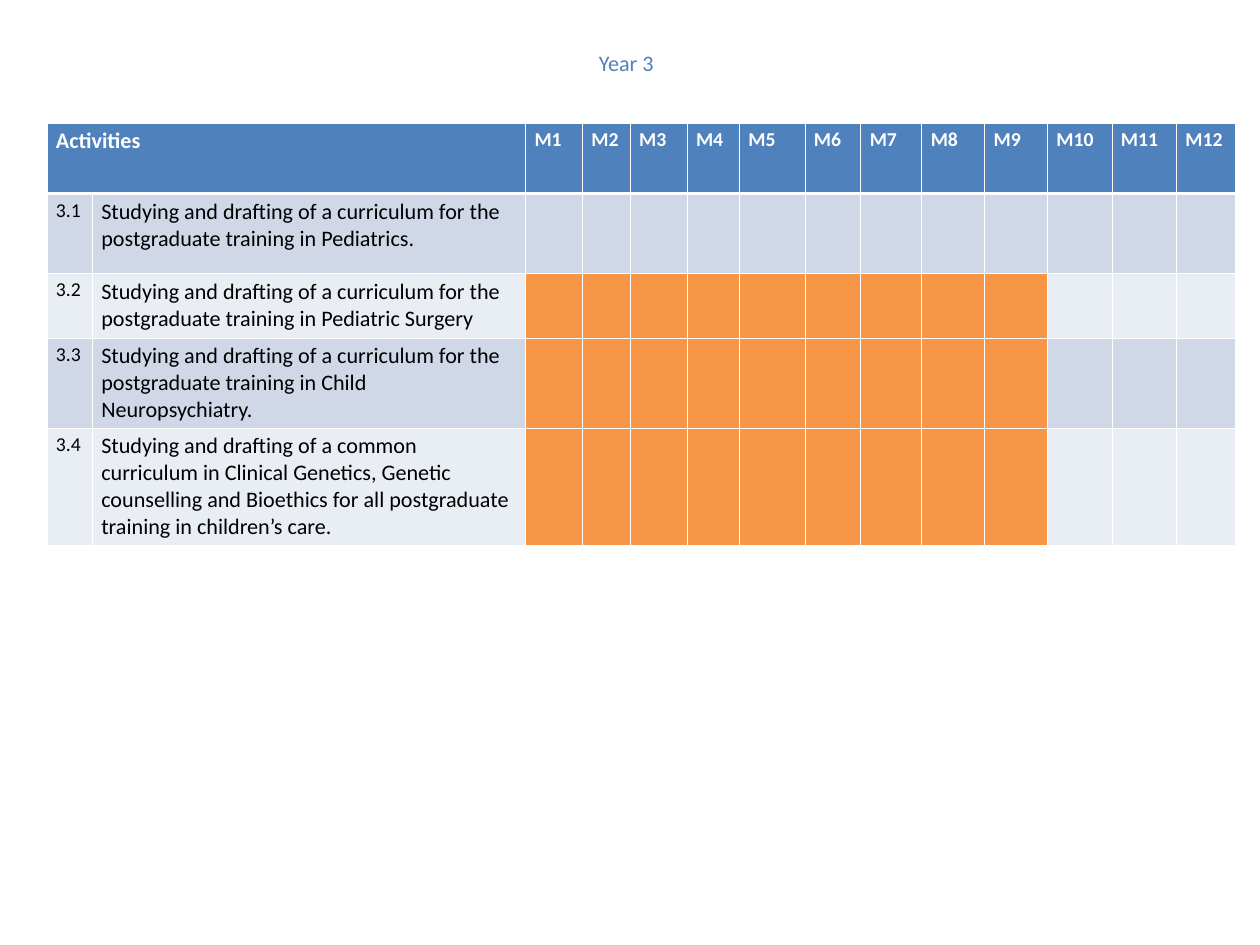
from lxml.etree import SubElement
from pptx import Presentation
from pptx.dml.color import RGBColor
from pptx.oxml.ns import qn
from pptx.util import Cm, Pt

BLUE, ORANGE, WHITE, BLACK = "4F81BD", "F79646", "FFFFFF", "000000"
BANDS = ["D0D8E8", "E9EDF4"]

MONTH_WIDTHS = [1.63, 1.37, 1.63, 1.5, 1.88, 1.6, 1.75, 1.8, 1.8, 1.85, 1.85, 1.7]
COL_WIDTHS = [1.3, 12.42] + MONTH_WIDTHS
ROW_HEIGHTS = [2.03, 2.29, 1.85, 2.58, 3.36]

# Each activity with the number of months it is active, counted from M1
ACTIVITIES = [
    ("Studying and drafting of a curriculum for the postgraduate training "
     "in Pediatrics.", 0),
    ("Studying and drafting of a curriculum for the postgraduate training "
     "in Pediatric Surgery", 9),
    ("Studying and drafting of a curriculum for the postgraduate training "
     "in Child Neuropsychiatry.", 9),
    ("Studying and drafting of a common curriculum in Clinical Genetics, "
     "Genetic counselling and Bioethics for all postgraduate training "
     "in children’s care.", 9),
]


def rgb(color):
    return RGBColor.from_string(color)


class SlideBuilder:
    font = "Calibri"

    def __init__(self, slide):
        self.s = slide

    def set_text(self, tf, text, size, color, bold=False):
        p = tf.paragraphs[0]
        p.text = text
        p.font.name = self.font
        p.font.size = Pt(size)
        p.font.bold = bold
        p.font.color.rgb = rgb(color)

    def label(self, x, y, w, h, text, size, color):
        tf = self.s.shapes.add_textbox(Cm(x), Cm(y), Cm(w), Cm(h)).text_frame
        tf.word_wrap = True
        self.set_text(tf, text, size, color)

    def table(self, x, y, widths, heights):
        frame = self.s.shapes.add_table(len(heights), len(widths), Cm(x), Cm(y),
                                        Cm(sum(widths)), Cm(sum(heights)))
        table = frame.table
        table.horz_banding = False
        for col, width in zip(table.columns, widths):
            col.width = Cm(width)
        for row, height in zip(table.rows, heights):
            row.height = Cm(height)
        return table

    def cell(self, cell, fill, top=1, bottom=1):
        tc_pr = cell._tc.get_or_add_tcPr()
        for side, width in zip("LRTB", (1, 1, top, bottom)):
            ln = SubElement(tc_pr, qn(f"a:ln{side}"), w=str(int(Pt(width))))
            SubElement(SubElement(ln, qn("a:solidFill")), qn("a:srgbClr"), val=WHITE)
        cell.fill.solid()
        cell.fill.fore_color.rgb = rgb(fill)


def main():
    prs = Presentation()
    prs.slide_width, prs.slide_height = Cm(36.12), Cm(27.1)
    b = SlideBuilder(prs.slides.add_slide(prs.slide_layouts[6]))

    # Gantt table
    table = b.table(1.35, 3.53, COL_WIDTHS, ROW_HEIGHTS)

    # Header row
    for col in range(len(COL_WIDTHS)):
        cell = table.cell(0, col)
        b.cell(cell, BLUE, bottom=3)
        if col >= 2:
            b.set_text(cell.text_frame, f"M{col - 1}", 16, WHITE, True)
    table.cell(0, 0).merge(table.cell(0, 1))
    b.set_text(table.cell(0, 0).text_frame, "Activities", 18, WHITE, True)

    # Activity rows
    for row, (activity, months) in enumerate(ACTIVITIES, 1):
        for col in range(len(COL_WIDTHS)):
            active = 2 <= col < 2 + months
            fill = ORANGE if active else BANDS[(row - 1) % 2]
            b.cell(table.cell(row, col), fill, top=3 if row == 1 else 1)
        b.set_text(table.cell(row, 0).text_frame, f"3.{row}", 16, BLACK)
        b.set_text(table.cell(row, 1).text_frame, activity, 18, BLACK)

    # Year label
    b.label(16.92, 1.3, 18.54, 1.02, "Year 3", 18, BLUE)

    prs.save("out.pptx")


if __name__ == "__main__":
    main()
